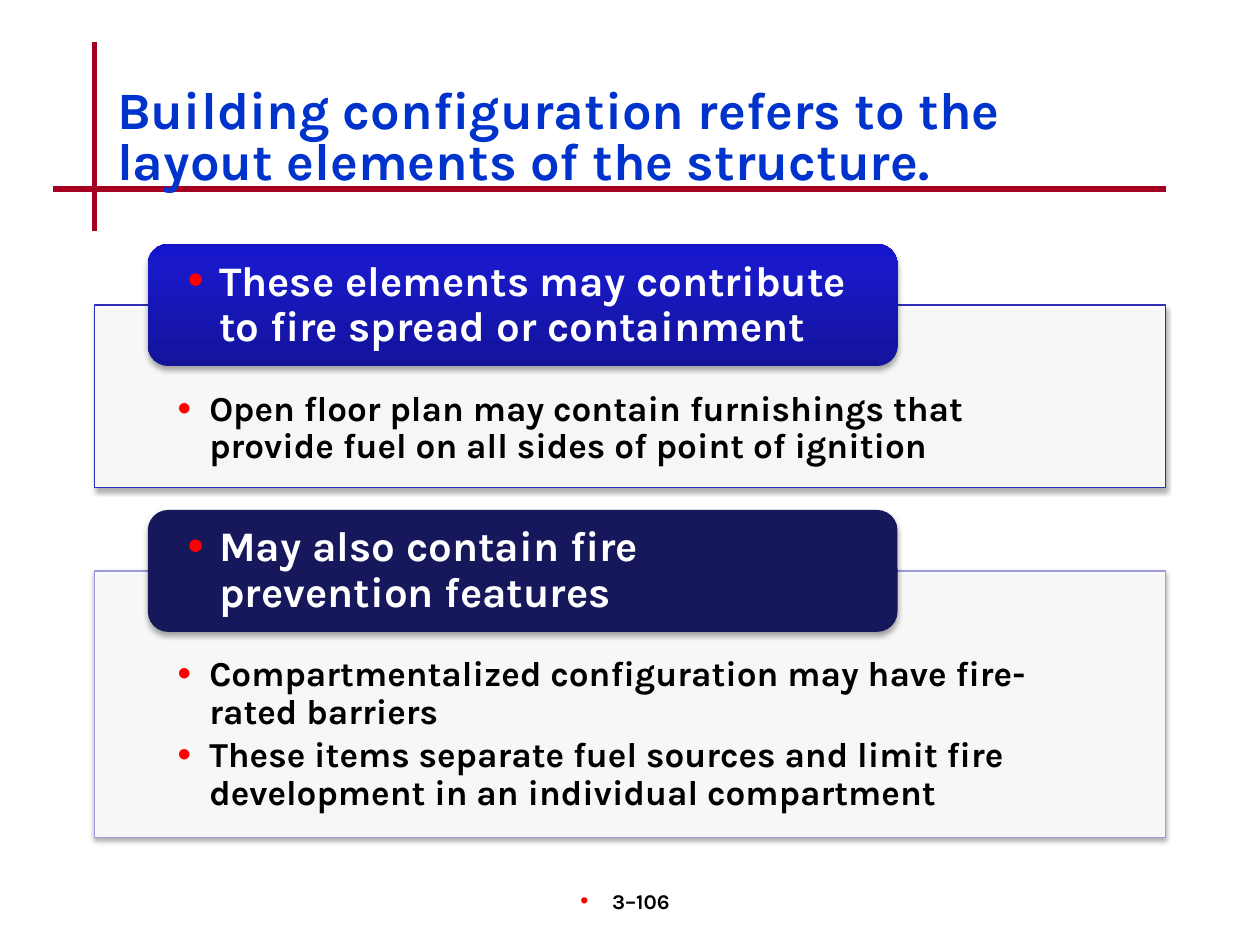
from lxml.etree import SubElement
from pptx import Presentation
from pptx.dml.color import RGBColor
from pptx.enum.shapes import MSO_CONNECTOR, MSO_SHAPE
from pptx.enum.text import MSO_ANCHOR as Anchor, PP_ALIGN as Align
from pptx.oxml.ns import qn
from pptx.util import Cm, Pt

FONT = "Karla"
INDENT = Cm(0.64)
HEADER_GRADIENT = [(0, "13139A"), (80, "1919C8"), (100, "1515CC")]


def rgb(value):
    return RGBColor.from_string(value)


def add_node(parent, tag, **attributes):
    return SubElement(parent, qn(tag), {key: str(value) for key, value in attributes.items()})


def add_color(parent, color, alpha=100):
    node = add_node(parent, "a:srgbClr", val=color)
    if alpha < 100:
        add_node(node, "a:alpha", val=alpha * 1000)


def add_shadow(shape):
    effects = add_node(shape._element.spPr, "a:effectLst")
    shadow = add_node(effects, "a:outerShdw", blurRad=Pt(3.1), dist=Pt(1.8),
                      dir=5400000, rotWithShape=0)
    add_color(shadow, "000000", 35)


def fill_gradient(shape, stops):
    """Fill from bottom to top with (percent, colour) stops."""
    shape.fill.gradient()
    shape.fill.gradient_angle = 90
    stop_list = shape._element.spPr.find(qn("a:gradFill")).find(qn("a:gsLst"))
    for child in list(stop_list):
        stop_list.remove(child)
    for percent, color in stops:
        add_color(add_node(stop_list, "a:gs", pos=percent * 1000), color)


def add_bullet(paragraph):
    properties = paragraph._p.get_or_add_pPr()
    properties.set("marL", str(INDENT))
    properties.set("indent", str(-INDENT))
    add_color(add_node(properties, "a:buClr"), "FF0000")
    add_node(properties, "a:buSzPct", val=110000)
    add_node(properties, "a:buFont", typeface="Arial")
    add_node(properties, "a:buChar", char="•")


def write_text(shape, texts, size, color="000000", align=Align.LEFT, anchor=Anchor.TOP,
               spacing=None, after=0, bullet=True, insets=(0.25, 0.13, 0.25, 0.13)):
    frame = shape.text_frame
    frame.word_wrap = True
    frame.vertical_anchor = anchor
    (frame.margin_left, frame.margin_top,
     frame.margin_right, frame.margin_bottom) = map(Cm, insets)
    for index, text in enumerate(texts):
        paragraph = frame.add_paragraph() if index else frame.paragraphs[0]
        paragraph.alignment = align
        paragraph.line_spacing = spacing
        paragraph.space_after = Pt(after)
        if bullet:
            add_bullet(paragraph)
        run = paragraph.add_run()
        run.text = text
        run.font.name = FONT
        run.font.size = Pt(size)
        run.font.bold = True
        run.font.color.rgb = rgb(color)


def add_rule(slide, x1, y1, x2, y2):
    rule = slide.shapes.add_connector(MSO_CONNECTOR.STRAIGHT, Cm(x1), Cm(y1), Cm(x2), Cm(y2))
    rule.line.color.rgb = rgb("A50021")
    rule.line.width = Pt(3)
    add_node(rule._element.spPr, "a:effectLst")


def add_title(slide, left, top, width, height, text):
    """Title with the crossing rules at its lower left."""
    add_rule(slide, left - 0.2, top - 0.71, left - 0.2, top + 3.1)
    add_rule(slide, left - 1.04, top + 2.26, left + width - 0.2, top + 2.26)
    box = slide.shapes.add_textbox(Cm(left), Cm(top), Cm(width), Cm(height))
    write_text(box, [text], 30, "0033CC", anchor=Anchor.MIDDLE, spacing=0.8, bullet=False)


def add_section(slide, left, top, width, height, heading, points, line_color, stops):
    """Panel of points with a rounded heading over its top edge."""
    panel = slide.shapes.add_shape(MSO_SHAPE.RECTANGLE, Cm(left), Cm(top), Cm(width), Cm(height))
    panel.fill.solid()
    panel.fill.fore_color.rgb = rgb("FFFFFF")
    add_node(panel._element.spPr.find(qn("a:solidFill"))[0], "a:alpha", val=90000)
    panel.line.color.rgb = rgb(line_color)
    panel.line.width = Pt(0.75)
    add_shadow(panel)
    write_text(panel, points, 20, spacing=0.9, after=3, insets=(1.68, 1.73, 1.68, 0.41))

    header = slide.shapes.add_shape(MSO_SHAPE.ROUNDED_RECTANGLE, Cm(left + 1.08), Cm(top - 1.23),
                                    Cm(width * 0.7), Cm(2.46))
    if len(stops) > 1:
        fill_gradient(header, stops)
    else:
        header.fill.solid()
        header.fill.fore_color.rgb = rgb(stops[0][1])
    header.line.fill.background()
    add_shadow(header)
    write_text(header, [heading], 24, "FFFFFF", anchor=Anchor.MIDDLE, spacing=0.9,
               insets=(0.68, 0.12, 0.68, 0.12))


def add_page_number(slide, left, top, width, height, text):
    box = slide.shapes.add_textbox(Cm(left), Cm(top), Cm(width), Cm(height))
    write_text(box, [text], 12, align=Align.CENTER)


def main():
    presentation = Presentation()
    presentation.slide_width, presentation.slide_height = Cm(25.4), Cm(19.05)
    slide = presentation.slides.add_slide(presentation.slide_layouts[6])
    add_title(slide, 2.11, 1.55, 21.59, 2.54,
              "Building configuration refers to the layout elements of the structure.")
    add_section(slide, 1.9, 6.15, 21.59, 3.68,
                "These elements may contribute to fire spread or containment",
                ["Open floor plan may contain furnishings that provide fuel on all sides "
                 "of point of ignition"],
                "2E2EB9", HEADER_GRADIENT)
    add_section(slide, 1.9, 11.51, 21.59, 5.38,
                "May also contain fire prevention features",
                ["Compartmentalized configuration may have fire-rated barriers",
                 "These items separate fuel sources and limit fire development "
                 "in an individual compartment"],
                "9C9CDD", [(0, "17175C")])
    add_page_number(slide, 9.96, 17.78, 5.28, 1.27, "3–106")
    presentation.save("out.pptx")


if __name__ == "__main__":
    main()
